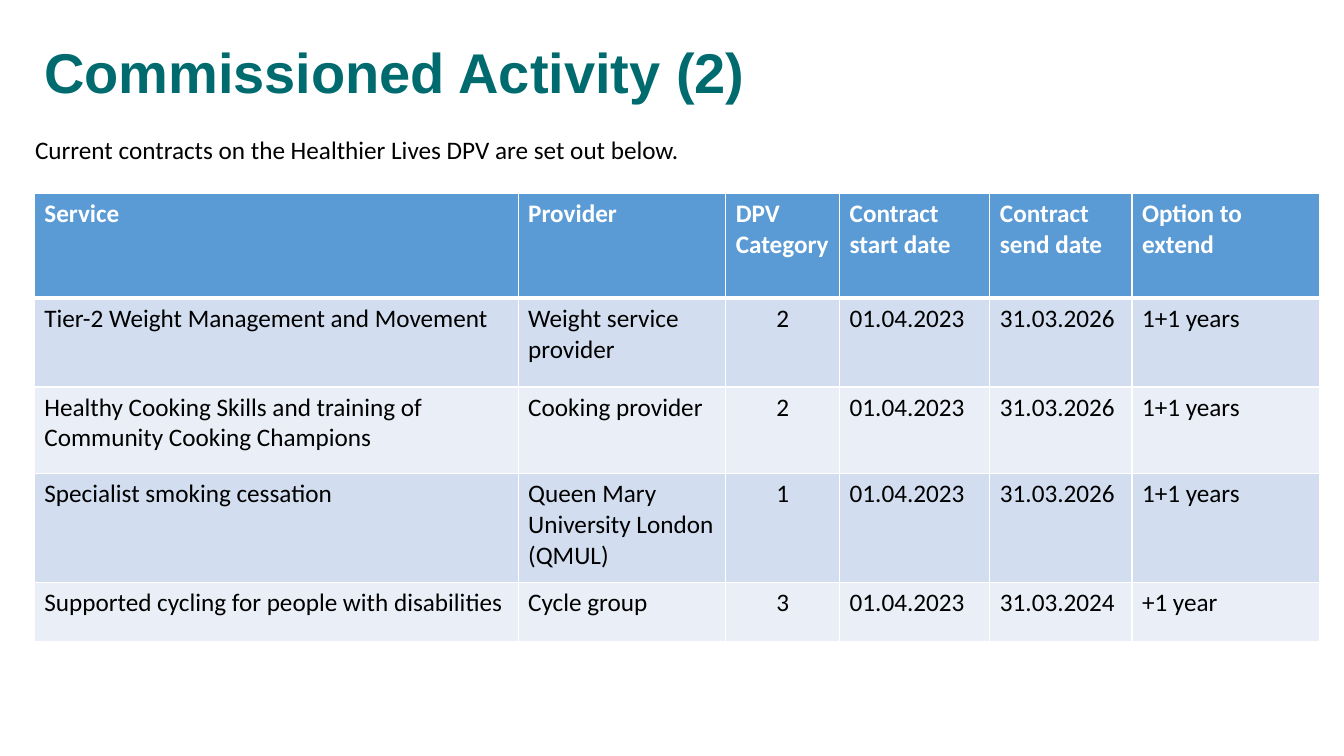
from pptx import Presentation
from pptx.dml.color import RGBColor
from pptx.enum.text import MSO_ANCHOR, PP_ALIGN
from pptx.util import Pt
from lxml import etree

LEFT, MID = PP_ALIGN.LEFT, PP_ALIGN.CENTER
TOP, BASE = MSO_ANCHOR.TOP, MSO_ANCHOR.BOTTOM
NS = "http://schemas.openxmlformats.org/drawingml/2006/main"
HUES = {"title": "006B6F", "text": "000000", "white": "FFFFFF",
        "head": "5B9BD5", "odd": "D2DEEF", "even": "EAEFF7"}
COLS = [345.6, 148.3, 81.4, 107.3, 101.5, 133.9]
ROWS = [74.9, 63.4, 61.9, 77.8, 42.5]
START = "01.04.2023"
DATA = [
    ["Service", "Provider", "DPV Category", "Contract start date",
     "Contract send date", "Option to extend"],
    ["Tier-2 Weight Management and Movement", "Weight service provider",
     "2", START, "31.03.2026", "1+1 years"],
    ["Healthy Cooking Skills and training of Community Cooking Champions",
     "Cooking provider", "2", START, "31.03.2026", "1+1 years"],
    ["Specialist smoking cessation", "Queen Mary University London (QMUL)",
     "1", START, "31.03.2026", "1+1 years"],
    ["Supported cycling for people with disabilities", "Cycle group",
     "3", START, "31.03.2024", "+1 year"],
]


def rgb(name):
    return RGBColor.from_string(HUES[name])


def write(frame, text, size=18, font="Calibri", hue="text", bold=False,
          align=LEFT, space=1.0):
    frame.word_wrap = True
    para = frame.paragraphs[0]
    para.alignment = align
    para.line_spacing = space
    run = para.add_run()
    run.text = text
    run.font.size = Pt(size)
    run.font.name = font
    run.font.bold = bold
    run.font.color.rgb = rgb(hue)


def add_text(slide, box, text, anchor=TOP, **style):
    frame = slide.shapes.add_textbox(*map(Pt, box)).text_frame
    frame.vertical_anchor = anchor
    write(frame, text, **style)


def edge(cell, side, width):
    props = cell._tc.get_or_add_tcPr()
    line = etree.SubElement(props, f"{{{NS}}}ln{side}", w=str(Pt(width)))
    fill = etree.SubElement(line, f"{{{NS}}}solidFill")
    etree.SubElement(fill, f"{{{NS}}}srgbClr", val=HUES["white"])


def add_grid(slide, left, top):
    box = map(Pt, (left, top, sum(COLS), sum(ROWS)))
    table = slide.shapes.add_table(len(ROWS), len(COLS), *box).table
    for col, width in zip(table.columns, COLS):
        col.width = Pt(width)
    for r, (row, high) in enumerate(zip(DATA, ROWS)):
        table.rows[r].height = Pt(high)
        head = r == 0
        tint = "head" if head else "odd" if r % 2 else "even"
        for c, text in enumerate(row):
            cell = table.cell(r, c)
            for side in "LRTB":
                thick = (head and side == "B") or (r == 1 and side == "T")
                edge(cell, side, 3 if thick else 1)
            cell.fill.solid()
            cell.fill.fore_color.rgb = rgb(tint)
            write(cell.text_frame, text, hue="white" if head else "text",
                  bold=head, align=MID if c == 2 and not head else LEFT)


def main():
    deck = Presentation()
    deck.slide_width, deck.slide_height = Pt(960), Pt(540)
    slide = deck.slides.add_slide(deck.slide_layouts[6])
    add_text(slide, (24.5, 0, 744.5, 79.2), "Commissioned Activity (2)",
             anchor=BASE, size=40, font="Arial", hue="title", bold=True,
             space=0.9)
    add_text(slide, (18, 92.2, 883.4, 72.7),
             "Current contracts on the Healthier Lives DPV are set out below.")
    add_grid(slide, 24.5, 138.2)
    deck.save("out.pptx")


if __name__ == "__main__":
    main()
